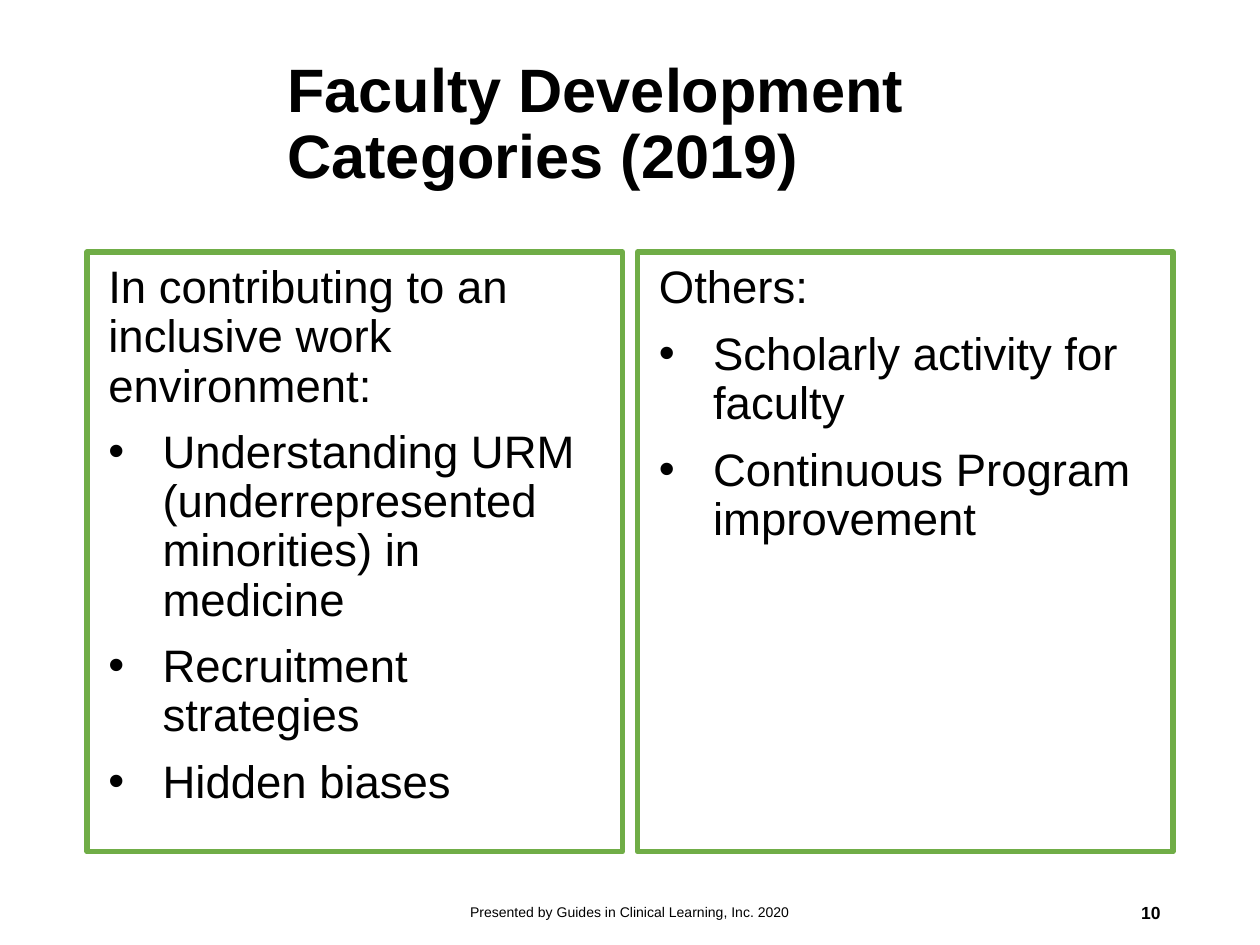
from lxml.etree import SubElement
from pptx import Presentation
from pptx.dml.color import RGBColor
from pptx.enum.text import MSO_ANCHOR as Anchor, MSO_AUTO_SIZE as AutoSize, PP_ALIGN as Align
from pptx.oxml.ns import qn
from pptx.util import Inches, Pt


def color(value):
    """Turn a hex string into a colour."""
    return RGBColor.from_string(value)


class SlideBuilder:
    """Hold the style and the current slide."""

    font = "Arial"
    ink = "000000"
    frame_color = "70AD47"

    def __init__(self, deck):
        """Add a two-content slide to the deck."""
        self.page = deck.slides.add_slide(deck.slide_layouts[3])

    def place(self, shape, bounds):
        """Move a shape to left, top, width and height in inches."""
        shape.left, shape.top, shape.width, shape.height = map(Inches, bounds)

    def prepare(self, box, anchor, inset):
        """Set wrapping, anchor and vertical insets of a text frame."""
        frame = box.text_frame
        frame.word_wrap = True
        frame.auto_size = AutoSize.NONE
        frame.vertical_anchor = anchor
        frame.margin_left = frame.margin_right = Inches(0.1)
        frame.margin_top = frame.margin_bottom = Inches(inset)
        return frame

    def add_text(self, para, text, size, bold=False, align=Align.LEFT):
        """Add one styled run to a paragraph."""
        para.alignment = align
        span = para.add_run()
        span.text = text
        span.font.name = self.font
        span.font.size = Pt(size)
        span.font.bold = bold
        span.font.color.rgb = color(self.ink)

    def indent(self, para, left, hanging, bullet):
        """Set the indents and bullet of a paragraph."""
        props = para._p.get_or_add_pPr()
        props.set("marL", str(Inches(left)))
        props.set("indent", str(Inches(-hanging)))
        if bullet:
            tint = SubElement(props, qn("a:buClr"))
            SubElement(tint, qn("a:srgbClr"), val=self.ink)
            SubElement(props, qn("a:buFont"), typeface=self.font)
            SubElement(props, qn("a:buChar"), char="•")
        else:
            SubElement(props, qn("a:buNone"))

    def title(self, text, bounds):
        """Fill the title placeholder."""
        box = self.page.shapes.title
        self.place(box, bounds)
        para = self.prepare(box, Anchor.MIDDLE, 0.1).paragraphs[0]
        para.line_spacing = 0.9
        self.add_text(para, text, 35, bold=True)

    def panel(self, index, heading, items, bounds):
        """Fill a body placeholder with a heading and bullets in a green frame."""
        box = self.page.placeholders[index]
        self.place(box, bounds)
        box.line.color.rgb = color(self.frame_color)
        box.line.width = Pt(3)
        frame = self.prepare(box, Anchor.TOP, 0.1)
        for number, text in enumerate([heading, *items]):
            para = frame.add_paragraph() if number else frame.paragraphs[0]
            if number:
                self.indent(para, 0.5, 0.43, True)
            else:
                self.indent(para, 0.07, 0, False)
            para.line_spacing = 0.9
            para.space_before = Pt(10 if number else 0)
            self.add_text(para, text, 26)

    def footer(self, text, bounds, size, align, bold=False):
        """Add a line of text at the foot of the slide."""
        box = self.page.shapes.add_textbox(*map(Inches, bounds))
        para = self.prepare(box, Anchor.MIDDLE, 0.05).paragraphs[0]
        self.add_text(para, text, size, bold, align)


def main():
    """Build and save the slide."""
    deck = Presentation()
    deck.slide_width, deck.slide_height = Inches(10), Inches(7.5)
    slide = SlideBuilder(deck)
    slide.title("Faculty Development Categories (2019)", (2.18, 0.27, 7.14, 1.45))
    panels = [
        ("In contributing to an inclusive work environment:",
         ["Understanding URM (underrepresented minorities) in medicine",
          "Recruitment strategies", "Hidden biases"]),
        ("Others:",
         ["Scholarly activity for faculty", "Continuous Program improvement"]),
    ]
    left, width, gap = 0.69, 4.25, 0.12
    for column, (heading, items) in enumerate(panels):
        bounds = (left + column * (width + gap), 2, width, 4.76)
        slide.panel(column + 1, heading, items, bounds)
    slide.footer("10", (7.06, 7.04, 2.25, 0.4), 10, Align.RIGHT, bold=True)
    slide.footer("Presented by Guides in Clinical Learning, Inc. 2020",
                 (3.31, 7.04, 3.38, 0.4), 8, Align.CENTER)
    deck.save("out.pptx")


if __name__ == "__main__":
    main()
